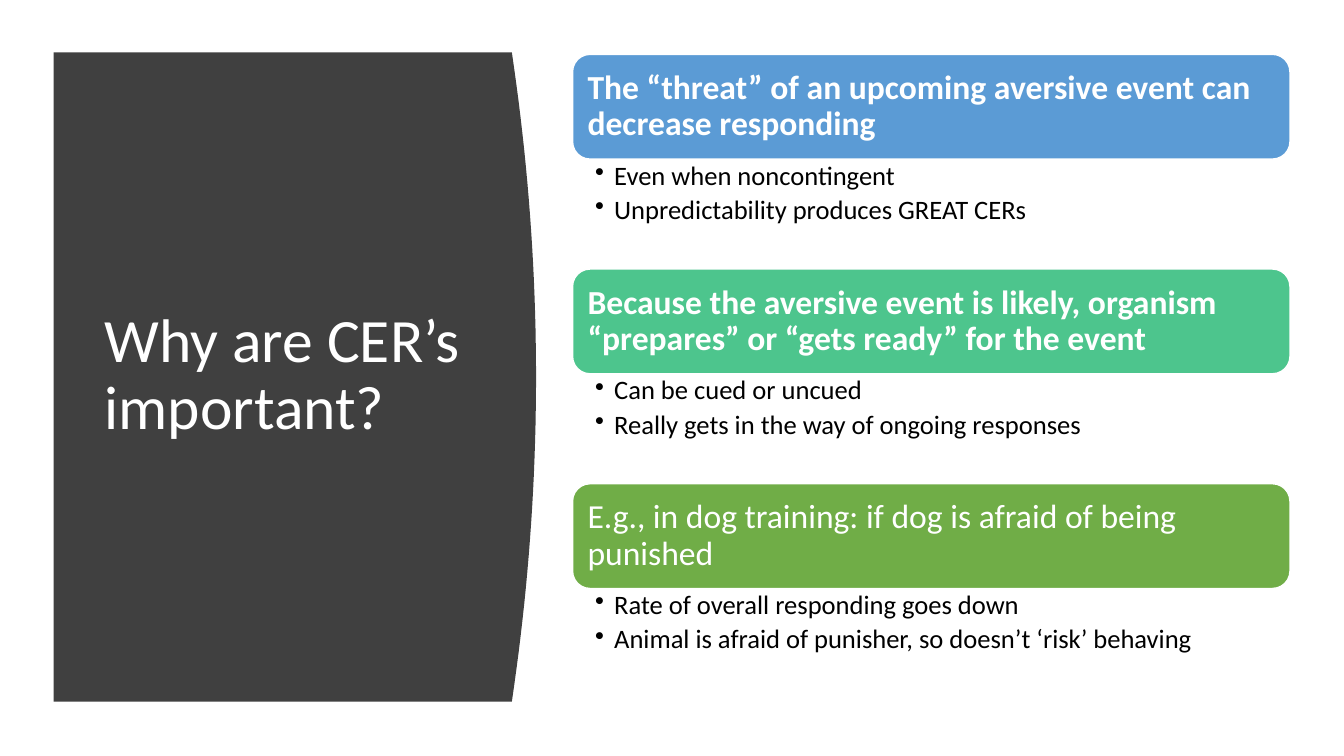
from dataclasses import dataclass

import pptx
import pptx.dml.color
import pptx.enum.shapes
import pptx.enum.text
import pptx.oxml
import pptx.oxml.ns
import pptx.util
from pptx.util import Cm


@dataclass(frozen=True)
class Theme:
    font: str = "Calibri"
    dark: str = "404040"
    light: str = "FFFFFF"
    body: str = "000000"
    blue: str = "5B9BD5"
    teal: str = "4DC58D"
    green: str = "70AD47"
    title_size: int = 44
    heading_size: int = 24
    bullet_size: int = 19


THEME = Theme()

REASONS = [
    ("The “threat” of an upcoming aversive event can decrease responding", True, THEME.blue,
     ["Even when noncontingent", "Unpredictability produces GREAT CERs"]),
    ("Because the aversive event is likely, organism “prepares” or “gets ready” for the event",
     True, THEME.teal,
     ["Can be cued or uncued", "Really gets in the way of ongoing responses"]),
    ("E.g., in dog training: if dog is afraid of being punished", False, THEME.green,
     ["Rate of overall responding goes down",
      "Animal is afraid of punisher, so doesn’t ‘risk’ behaving"]),
]

REASON_LEFT, REASON_TOP, REASON_WIDTH = 14.43, 1.37, 18.08
HEADING_HEIGHT, BULLETS_HEIGHT = 2.64, 2.77


def rgb(color):
    return pptx.dml.color.RGBColor.from_string(color)


def add_bullet(paragraph, indent=Cm(0.48)):
    properties = paragraph._p.get_or_add_pPr()
    properties.set("marL", str(indent))
    properties.set("indent", str(-indent))
    mark = pptx.oxml.parse_xml(f'<a:buChar {pptx.oxml.ns.nsdecls("a")} char="•"/>')
    properties.append(mark)


def write(holder, lines, *, size, color, bold=False, middle=False, bullets=False,
          insets=(0.25, 0.13, 0.25, 0.13), space_after=0):
    frame = holder.text_frame
    frame.word_wrap = True
    frame.margin_left, frame.margin_top, frame.margin_right, frame.margin_bottom = map(Cm, insets)
    anchors = pptx.enum.text.MSO_ANCHOR
    frame.vertical_anchor = anchors.MIDDLE if middle else anchors.TOP
    for number, line in enumerate(lines):
        paragraph = frame.add_paragraph() if number else frame.paragraphs[0]
        paragraph.alignment = pptx.enum.text.PP_ALIGN.LEFT
        paragraph.line_spacing = 0.9
        paragraph.space_after = pptx.util.Pt(space_after)
        if bullets:
            add_bullet(paragraph)
        run = paragraph.add_run()
        run.text = line
        run.font.name = THEME.font
        run.font.size = pptx.util.Pt(size)
        run.font.bold = bold
        run.font.color.rgb = rgb(color)


def add_curved_panel(slide, left, top, edge, bottom, bulge, steps=40):
    middle, half = (top + bottom) / 2, (bottom - top) / 2
    heights = [top + (bottom - top) * step / steps for step in range(steps + 1)]
    curve = [(Cm(edge + bulge * (1 - ((y - middle) / half) ** 2)), Cm(y)) for y in heights]
    outline = slide.shapes.build_freeform(Cm(left), Cm(top))
    outline.add_line_segments(curve + [(Cm(left), Cm(bottom))], close=True)
    panel = outline.convert_to_shape()
    panel.shadow.inherit = False
    panel.fill.solid()
    panel.fill.fore_color.rgb = rgb(THEME.dark)
    panel.line.fill.background()


def add_title(slide, title):
    heading = slide.shapes.add_textbox(Cm(2.39), Cm(2.82), Cm(9.5), Cm(13.31))
    write(heading, [title], size=THEME.title_size, color=THEME.light, middle=True)


def add_reason(slide, top, heading, bold, color, details):
    banner = slide.shapes.add_shape(
        pptx.enum.shapes.MSO_SHAPE.ROUNDED_RECTANGLE,
        Cm(REASON_LEFT), Cm(top), Cm(REASON_WIDTH), Cm(HEADING_HEIGHT))
    banner.shadow.inherit = False
    banner.fill.solid()
    banner.fill.fore_color.rgb = rgb(color)
    banner.line.color.rgb = rgb(THEME.light)
    banner.line.width = pptx.util.Pt(1)
    write(banner, [heading], size=THEME.heading_size, color=THEME.light, bold=bold,
          middle=True, insets=(0.25, 0.25, 0.25, 0.25))
    points = slide.shapes.add_textbox(
        Cm(REASON_LEFT), Cm(top + HEADING_HEIGHT), Cm(REASON_WIDTH), Cm(BULLETS_HEIGHT))
    write(points, details, size=THEME.bullet_size, color=THEME.body, bullets=True,
          insets=(0.57, 0.08, 0.48, 0.08), space_after=4)


def main():
    deck = pptx.Presentation()
    deck.slide_width, deck.slide_height = Cm(33.87), Cm(19.05)
    slide = deck.slides.add_slide(deck.slide_layouts[6])
    add_curved_panel(slide, left=1.35, top=1.32, edge=12.9, bottom=17.68, bulge=0.61)
    add_title(slide, "Why are CER’s important?")
    for number, reason in enumerate(REASONS):
        add_reason(slide, REASON_TOP + number * (HEADING_HEIGHT + BULLETS_HEIGHT), *reason)
    deck.save("out.pptx")


if __name__ == "__main__":
    main()
